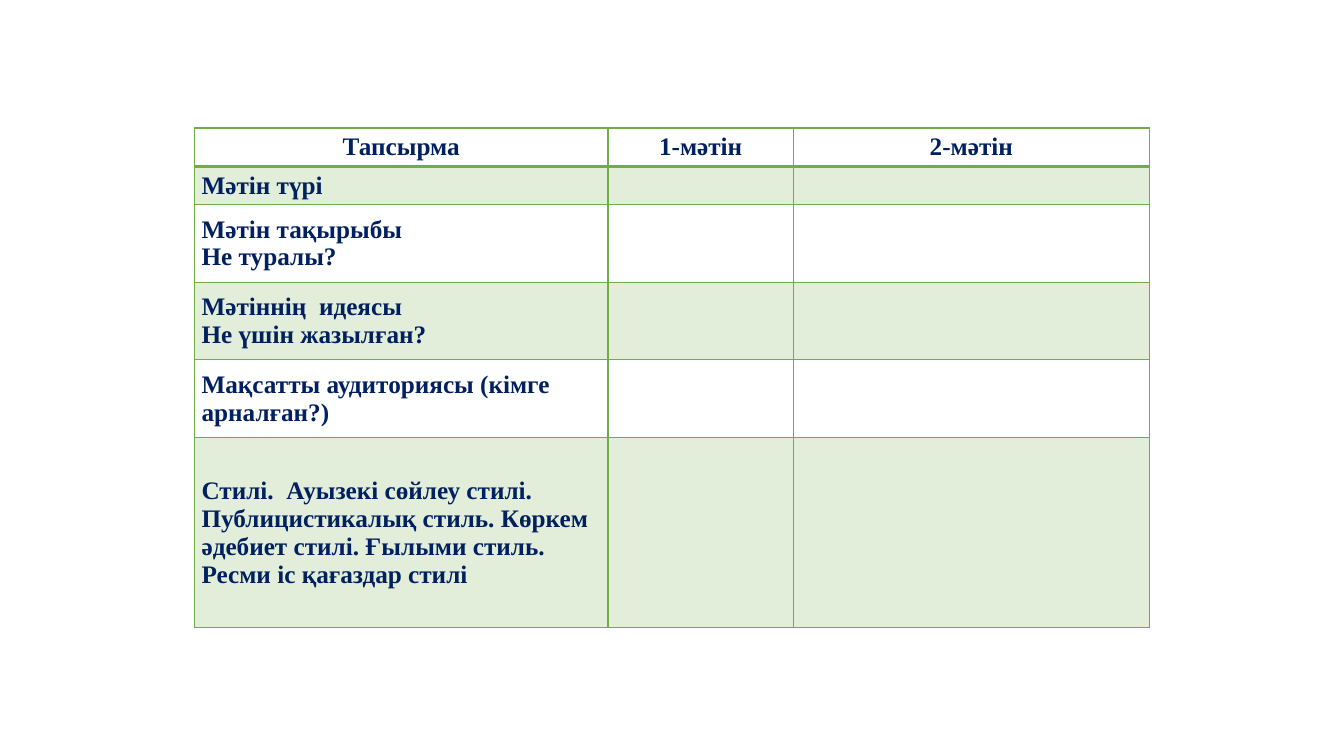
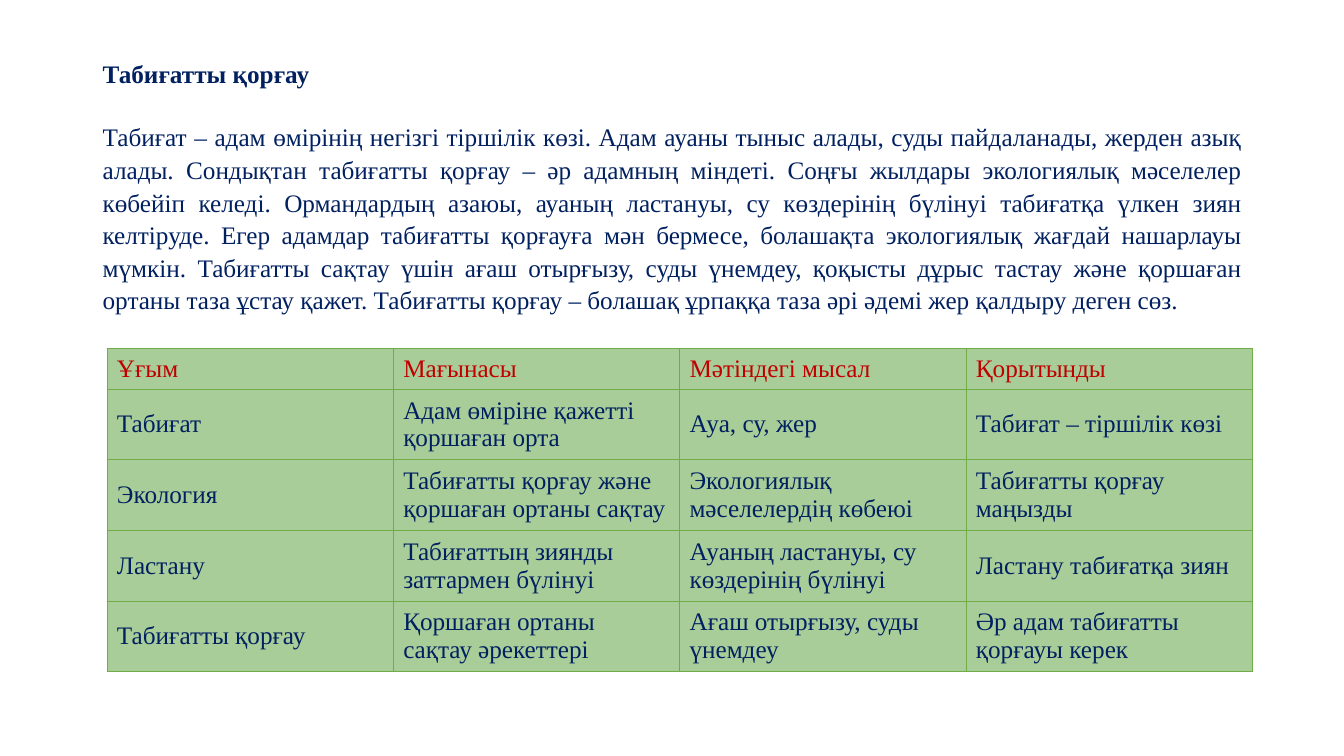
from lxml.etree import SubElement
from pptx import Presentation
from pptx.dml.color import RGBColor
from pptx.enum.text import MSO_ANCHOR, PP_ALIGN
from pptx.oxml.ns import qn
from pptx.util import Inches, Pt

NAVY = RGBColor(0x00, 0x20, 0x60)
RED = RGBColor(0xC0, 0x00, 0x00)
GREEN = RGBColor(0x70, 0xAD, 0x47)
PALE = RGBColor(0xE2, 0xEE, 0xDA)
SAGE = RGBColor(0xA9, 0xCD, 0x99)
WHITE = RGBColor(0xFF, 0xFF, 0xFF)
FONT = "Times New Roman"


def add_text(p, text, color=NAVY, bold=False, align=PP_ALIGN.LEFT):
    p.alignment = align
    p.font.size = Pt(18)
    p.font.name = FONT
    if text:
        r = p.add_run()
        r.text = text
        r.font.size = Pt(18)
        r.font.name = FONT
        r.font.bold = bold
        r.font.color.rgb = color


def add_grid(s, left, top, widths, heights, rows, fills, line, head_line,
             head_color=NAVY, head_align=PP_ALIGN.LEFT, bold=False, inset=(0.1, 0.05)):
    tbl = s.shapes.add_table(len(heights), len(widths), Inches(left), Inches(top),
                             Inches(sum(widths)), Inches(sum(heights))).table
    tbl.first_row = tbl.horz_banding = False
    for col, width in zip(tbl.columns, widths):
        col.width = Inches(width)
    for i, height in enumerate(heights):
        tbl.rows[i].height = Inches(height)
        for j, text in enumerate(rows[i]):
            cell = tbl.cell(i, j)
            cell.vertical_anchor = MSO_ANCHOR.MIDDLE
            cell.margin_left = cell.margin_right = Inches(inset[0])
            cell.margin_top = cell.margin_bottom = Inches(inset[1])
            edges = {"a:lnL": line, "a:lnR": line,
                     "a:lnT": head_line if i == 1 else line,
                     "a:lnB": head_line if i == 0 else line}
            for tag, weight in edges.items():
                ln = SubElement(cell._tc.get_or_add_tcPr(), qn(tag), w=str(Pt(weight)))
                SubElement(SubElement(ln, qn("a:solidFill")), qn("a:srgbClr"), val=str(GREEN))
            cell.fill.solid()
            cell.fill.fore_color.rgb = fills[i % len(fills)]
            tf = cell.text_frame
            for k, part in enumerate(text.split("\n")):
                p = tf.add_paragraph() if k else tf.paragraphs[0]
                add_text(p, part, NAVY if i else head_color, bold,
                         PP_ALIGN.LEFT if i else head_align)


prs = Presentation()
prs.slide_width = Inches(13.33)
prs.slide_height = Inches(7.5)
blank = prs.slide_layouts[6]

s = prs.slides.add_slide(blank)
tasks = [
    "Мәтін түрі",
    "Мәтін тақырыбы\nНе туралы?",
    "Мәтіннің  идеясы\nНе үшін жазылған?",
    "Мақсатты аудиториясы (кімге арналған?)",
    "Стилі.  Ауызекі сөйлеу стилі. Публицистикалық стиль. Көркем әдебиет стилі. "
    "Ғылыми стиль. Ресми іс қағаздар стилі",
]
rows = [["Тапсырма", "1-мәтін", "2-мәтін"]] + [[task, "", ""] for task in tasks]
add_grid(s, 1.93, 1.27, [4.1, 1.84, 3.53], [0.38, 0.38, 0.77, 0.77, 0.77, 1.89], rows,
         [WHITE, PALE], 1, 2, head_align=PP_ALIGN.CENTER, bold=True, inset=(0.07, 0))

s = prs.slides.add_slide(blank)
tf = s.shapes.add_textbox(Inches(0.92), Inches(0.51), Inches(11.5), Inches(2.52)).text_frame
tf.word_wrap = True
title = tf.paragraphs[0]
add_text(title, "Табиғатты қорғау", bold=True, align=PP_ALIGN.JUSTIFY)
title.line_spacing = 1.08
title.space_after = Pt(21.6)
body = tf.add_paragraph()
add_text(
    body,
    "Табиғат – адам өмірінің негізгі тіршілік көзі. Адам ауаны тыныс алады, суды "
    "пайдаланады, жерден азық алады. Сондықтан табиғатты қорғау – әр адамның міндеті. "
    "Соңғы жылдары экологиялық мәселелер көбейіп келеді. Ормандардың азаюы, ауаның "
    "ластануы, су көздерінің бүлінуі табиғатқа үлкен зиян келтіруде. Егер адамдар "
    "табиғатты қорғауға мән бермесе, болашақта экологиялық жағдай нашарлауы мүмкін. "
    "Табиғатты сақтау үшін ағаш отырғызу, суды үнемдеу, қоқысты дұрыс тастау және "
    "қоршаған ортаны таза ұстау қажет. Табиғатты қорғау – болашақ ұрпаққа таза әрі "
    "әдемі жер қалдыру деген сөз.",
    align=PP_ALIGN.JUSTIFY)
body.line_spacing = 1.08

rows = [
    ["Ұғым", "Мағынасы", "Мәтіндегі мысал", "Қорытынды"],
    ["Табиғат", "Адам өміріне қажетті қоршаған орта", "Ауа, су, жер",
     "Табиғат – тіршілік көзі"],
    ["Экология", "Табиғатты қорғау және қоршаған ортаны сақтау",
     "Экологиялық мәселелердің көбеюі", "Табиғатты қорғау маңызды"],
    ["Ластану", "Табиғаттың зиянды заттармен бүлінуі",
     "Ауаның ластануы, су көздерінің бүлінуі", "Ластану табиғатқа зиян"],
    ["Табиғатты қорғау", "Қоршаған ортаны сақтау әрекеттері",
     "Ағаш отырғызу, суды үнемдеу", "Әр адам табиғатты қорғауы керек"],
]
add_grid(s, 1.06, 3.46, [2.84] * 4, [0.4] + [0.7] * 4, rows, [SAGE], 0.5, 0.5,
         head_color=RED)

prs.save("out.pptx")
